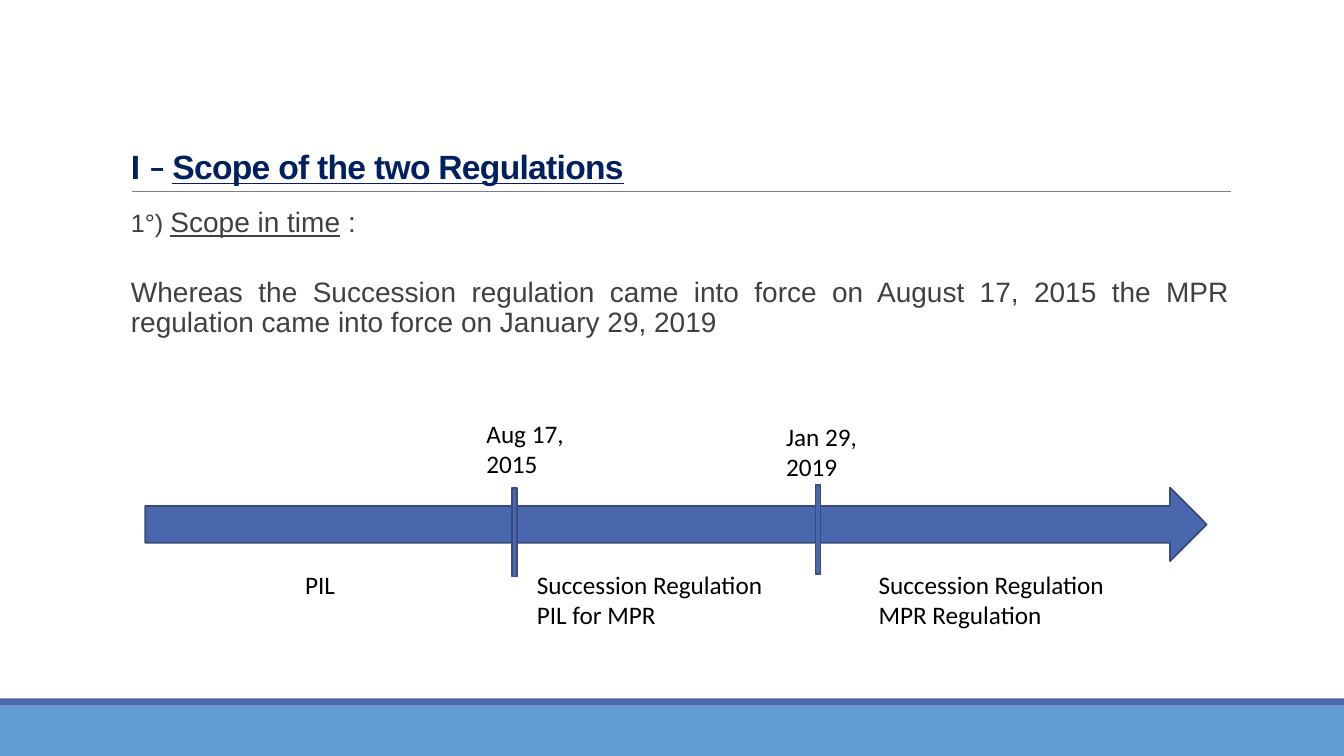
from typing import NamedTuple

from lxml import etree
from pptx import Presentation
from pptx.dml.color import RGBColor
from pptx.enum import shapes, text
from pptx.oxml import ns
from pptx.util import Cm, Pt

COLOURS = {
    "footer": "629DD1",
    "accent": "4A66AC",
    "outline": "374B7F",
    "rule": "808080",
    "title": "002060",
    "body": "404040",
    "label": "000000",
}


class Frame(NamedTuple):
    left: float
    top: float
    width: float
    height: float


class Span(NamedTuple):
    words: str
    size: float
    colour: str
    font: str = "Arial"
    bold: bool = False
    underline: bool = False
    tracking: int = 0


class Label(NamedTuple):
    frame: Frame
    lines: list[str]


class Block(NamedTuple):
    frame: Frame
    colour: str
    kind: shapes.MSO_SHAPE = shapes.MSO_SHAPE.RECTANGLE
    outlined: bool = False


def colour_of(name: str) -> RGBColor:
    return RGBColor.from_string(COLOURS[name])


def place(frame: Frame) -> list[Cm]:
    return [Cm(length) for length in frame]


def draw_block(page, block: Block) -> None:
    shape = page.shapes.add_shape(block.kind, *place(block.frame))
    shape.shadow.inherit = False
    shape.fill.solid()
    shape.fill.fore_color.rgb = colour_of(block.colour)
    if block.outlined:
        shape.line.color.rgb = colour_of("outline")
        shape.line.width = Pt(1.25)
    else:
        shape.line.fill.background()


def add_text_box(page, frame: Frame):
    box = page.shapes.add_textbox(*place(frame))
    box.text_frame.word_wrap = True
    return box.text_frame


def write_spans(para, spans: list[Span]) -> None:
    for span in spans:
        run = para.add_run()
        run.text = span.words
        run.font.size = Pt(span.size)
        run.font.name = span.font
        run.font.bold = span.bold
        run.font.underline = span.underline
        run.font.color.rgb = colour_of(span.colour)
        if span.tracking:
            run.font._element.set("spc", str(span.tracking))


def draw_label(page, label: Label) -> None:
    frame = add_text_box(page, label.frame)
    for index, line in enumerate(label.lines):
        para = frame.paragraphs[0] if index == 0 else frame.add_paragraph()
        para.text = line
        para.font.size = Pt(18)
        para.font.name = "Calibri"
        para.font.color.rgb = colour_of("label")


def draw_rule(page, left: float, right: float, top: float) -> None:
    rule = page.shapes.add_connector(
        shapes.MSO_CONNECTOR.STRAIGHT, Cm(left), Cm(top), Cm(right), Cm(top))
    rule.line.color.rgb = colour_of("rule")
    rule.line.width = Pt(0.5)
    etree.SubElement(rule._element.spPr, ns.qn("a:effectLst"))


def draw_title(page) -> None:
    frame = add_text_box(page, Frame(3.05, 0.79, 27.94, 4.04))
    frame.vertical_anchor = text.MSO_ANCHOR.BOTTOM
    para = frame.paragraphs[0]
    para.line_spacing = 0.85
    write_spans(para, [
        Span("I ", 24, "title", bold=True, tracking=-50),
        Span("– ", 24, "title", "Calibri", bold=True, tracking=-50),
        Span("Scope of the two Regulations", 24, "title",
             bold=True, underline=True, tracking=-50),
    ])


def draw_body(page) -> None:
    frame = add_text_box(page, Frame(3.05, 5.13, 27.94, 11.18))
    frame.margin_right = 0
    heading, statement = frame.paragraphs[0], frame.add_paragraph()
    for para in (heading, statement):
        para.alignment = text.PP_ALIGN.JUSTIFY
        para.line_spacing = 0.9
    heading.space_after = Pt(28)
    write_spans(heading, [
        Span("1°) ", 18, "body"),
        Span("Scope in time", 20, "body", underline=True),
        Span(" : ", 20, "body"),
    ])
    write_spans(statement, [
        Span("Whereas the Succession regulation came into force on "
             "August 17, 2015 the MPR regulation came into force on "
             "January 29, 2019", 20, "body"),
    ])


FOOTER = [
    Block(Frame(0, 17.78, 33.87, 1.27), "footer"),
    Block(Frame(0, 17.6, 33.87, 0.18), "accent"),
]
TIMELINE = [
    Block(Frame(3.66, 12.29, 26.75, 1.85), "accent",
          shapes.MSO_SHAPE.RIGHT_ARROW, outlined=True),
    Block(Frame(12.9, 12.29, 0.13, 2.24), "accent", outlined=True),
    Block(Frame(20.55, 12.22, 0.13, 2.24), "accent", outlined=True),
]
LABELS = [
    Label(Frame(12.01, 10.41, 3.12, 1.8), ["Aug 17, 2015"]),
    Label(Frame(19.56, 10.49, 3.12, 1.8), ["Jan 29, 2019"]),
    Label(Frame(7.44, 14.22, 3.12, 1.02), ["PIL"]),
    Label(Frame(13.28, 14.22, 7.06, 1.8),
          ["Succession Regulation", "PIL for MPR"]),
    Label(Frame(21.89, 14.22, 7.06, 1.8),
          ["Succession Regulation", "MPR Regulation"]),
]


def main() -> None:
    deck = Presentation()
    deck.slide_width, deck.slide_height = Cm(33.87), Cm(19.05)
    page = deck.slides.add_slide(deck.slide_layouts[6])

    # Footer bands and title rule
    for band in FOOTER:
        draw_block(page, band)
    draw_rule(page, 3.33, 31.01, 4.83)

    # Title and body text
    draw_title(page)
    draw_body(page)

    # Timeline with its dates and periods
    for block in TIMELINE:
        draw_block(page, block)
    for label in LABELS:
        draw_label(page, label)

    deck.save("out.pptx")


if __name__ == "__main__":
    main()
